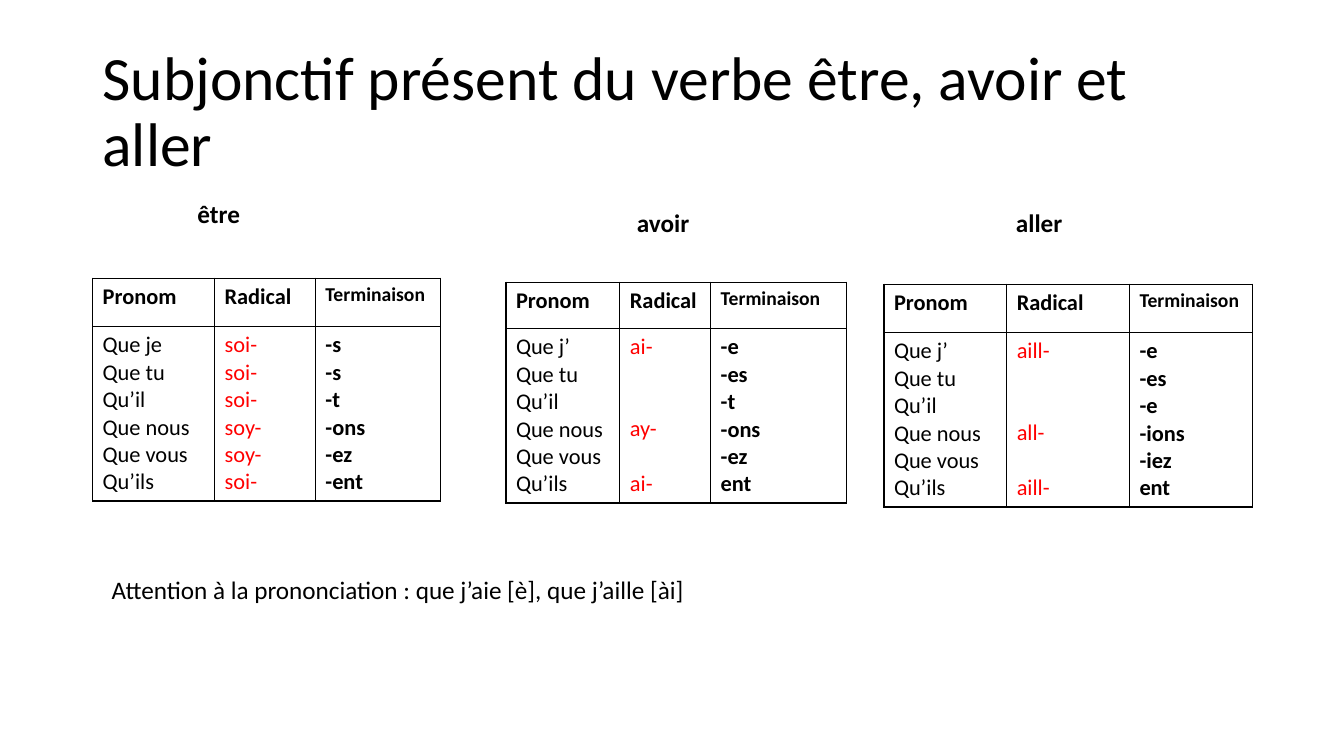
"""Build a slide of the French present subjunctive of être, avoir and aller."""
from lxml.etree import SubElement
from pptx import Presentation
from pptx.dml.color import RGBColor
from pptx.enum.text import MSO_ANCHOR, MSO_AUTO_SIZE, PP_ALIGN
from pptx.oxml.ns import qn
from pptx.util import Pt

BLACK = RGBColor(0, 0, 0)
RED = RGBColor(255, 0, 0)
WHITE = RGBColor(255, 255, 255)
LINE_HEIGHT = 19.5
HEADERS = [("Pronom", 16), ("Radical", 16), ("Terminaison", 14)]
OTHER_PRONOUNS = ["Que tu", "Qu’il", "Que nous", "Que vous", "Qu’ils"]

VERBS = [
    dict(name="avoir", label=(447.8, 144.7, 52.6), corner=(361.4, 201.6),
         widths=(81.4, 64.8, 97.2), heights=(33.1, 121), first="Que j’",
         stems=["ai-", "", "", "ay-", "", "ai-"],
         endings=["-e", "-es", "-t", "-ons", "-ez", "ent"]),
    dict(name="être", label=(133.9, 138.2, 45.4), corner=(66.2, 198.7),
         widths=(87.1, 72, 89.3), heights=(34.6, 122.4), first="Que je",
         stems=["soi-", "soi-", "soi-", "soy-", "soy-", "soi-"],
         endings=["-s", "-s", "-t", "-ons", "-ez", "-ent"]),
    dict(name="aller", label=(718.6, 144.7, 47.5), corner=(631.4, 203),
         widths=(87.7, 87.7, 87.7), heights=(34.6, 122.4), first="Que j’",
         stems=["aill-", "", "", "all-", "", "aill-"],
         endings=["-e", "-es", "-e", "-ions", "-iez", "ent"]),
]


def write(para, text, size, color=BLACK, bold=False):
    para.text = text
    font = para.font
    font.name, font.size, font.bold = "Calibri", Pt(size), bold
    font.color.rgb = color


def fill_cell(cell, lines, size, color, bold):
    props = cell._tc.get_or_add_tcPr()
    for side in ("lnL", "lnR", "lnT", "lnB"):
        border = SubElement(props, qn(f"a:{side}"), w=str(Pt(1)))
        paint = SubElement(border, qn("a:solidFill"))
        SubElement(paint, qn("a:srgbClr"), val=str(BLACK))
    cell.fill.solid()
    cell.fill.fore_color.rgb = WHITE
    para, skipped = cell.text_frame.paragraphs[0], 0
    for index, line in enumerate(lines):
        if not line:
            skipped += 1
            continue
        if index:
            para = cell.text_frame.add_paragraph()
        write(para, line, size, color, bold)
        if skipped:
            para.space_before = Pt(skipped * LINE_HEIGHT)
            skipped = 0


deck = Presentation()
deck.slide_width, deck.slide_height = Pt(960), Pt(540)
page = deck.slides.add_slide(deck.slide_layouts[5])

title = page.shapes.title
title.left, title.top, title.width, title.height = Pt(66), Pt(28.8), Pt(828), Pt(104.4)
title.text_frame.vertical_anchor = MSO_ANCHOR.MIDDLE
title.text_frame.auto_size = MSO_AUTO_SIZE.NONE
heading = title.text_frame.paragraphs[0]
write(heading, "Subjonctif présent du verbe être, avoir et aller", 44)
heading.alignment = PP_ALIGN.LEFT
heading.line_spacing = 0.9

for verb in VERBS:
    left, top = verb["corner"]
    frame = page.shapes.add_table(2, 3, Pt(left), Pt(top),
                                  Pt(sum(verb["widths"])), Pt(sum(verb["heights"])))
    table = frame.table
    for row, height in zip(table.rows, verb["heights"]):
        row.height = Pt(height)
    bodies = [([verb["first"]] + OTHER_PRONOUNS, BLACK, False),
              (verb["stems"], RED, False),
              (verb["endings"], BLACK, True)]
    for col, (header, size) in enumerate(HEADERS):
        table.columns[col].width = Pt(verb["widths"][col])
        fill_cell(table.cell(0, col), [header], size, BLACK, True)
        lines, color, bold = bodies[col]
        fill_cell(table.cell(1, col), lines, 16, color, bold)

captions = [(verb["name"], *verb["label"], True) for verb in VERBS]
captions.append(("Attention à la prononciation : que j’aie [è], que j’aille [ài]",
                 72.7, 406.8, 429.1, False))
for text, left, top, width, bold in captions:
    box = page.shapes.add_textbox(Pt(left), Pt(top), Pt(width), Pt(29))
    box.text_frame.auto_size = MSO_AUTO_SIZE.SHAPE_TO_FIT_TEXT
    write(box.text_frame.paragraphs[0], text, 18, bold=bold)

deck.save("out.pptx")
